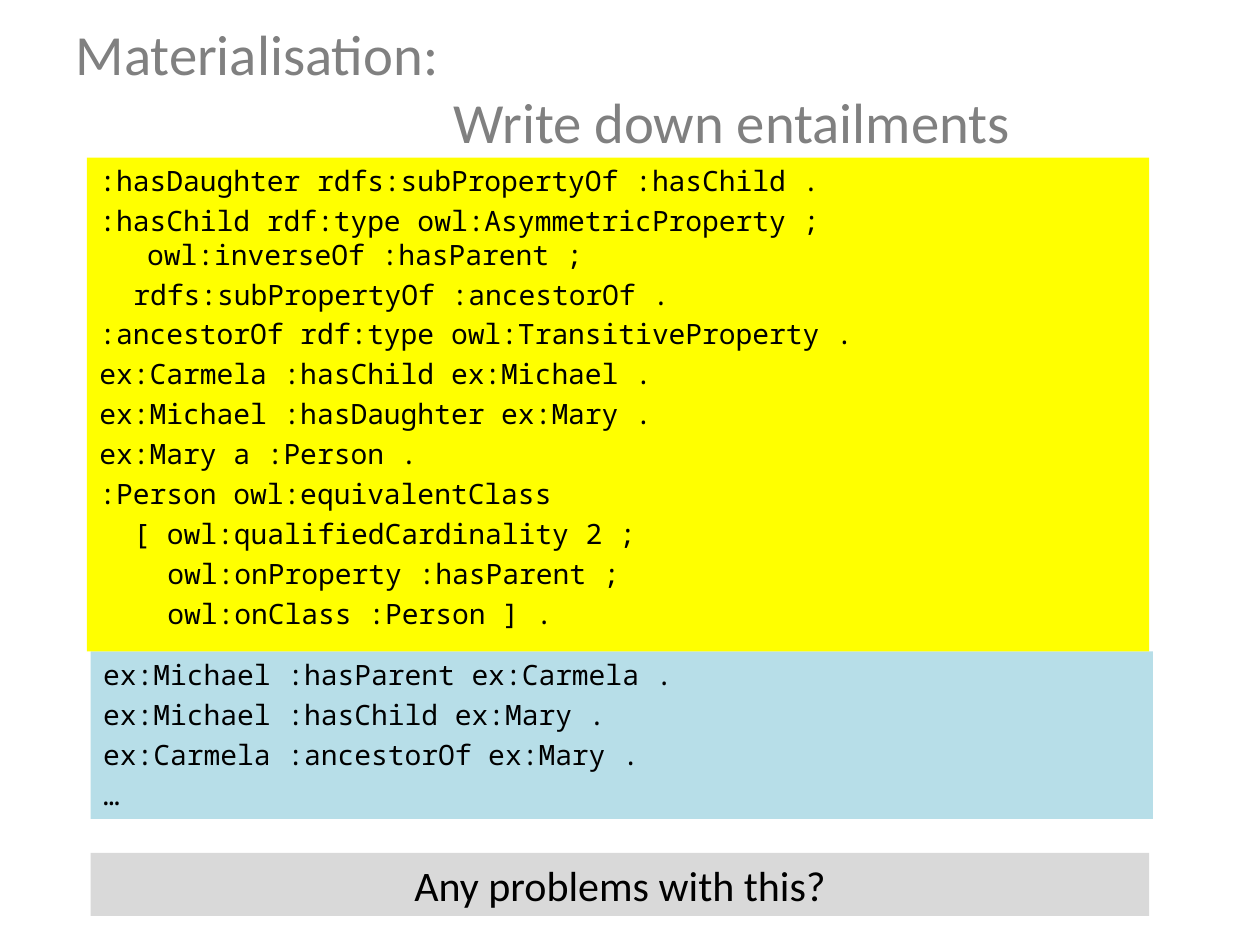
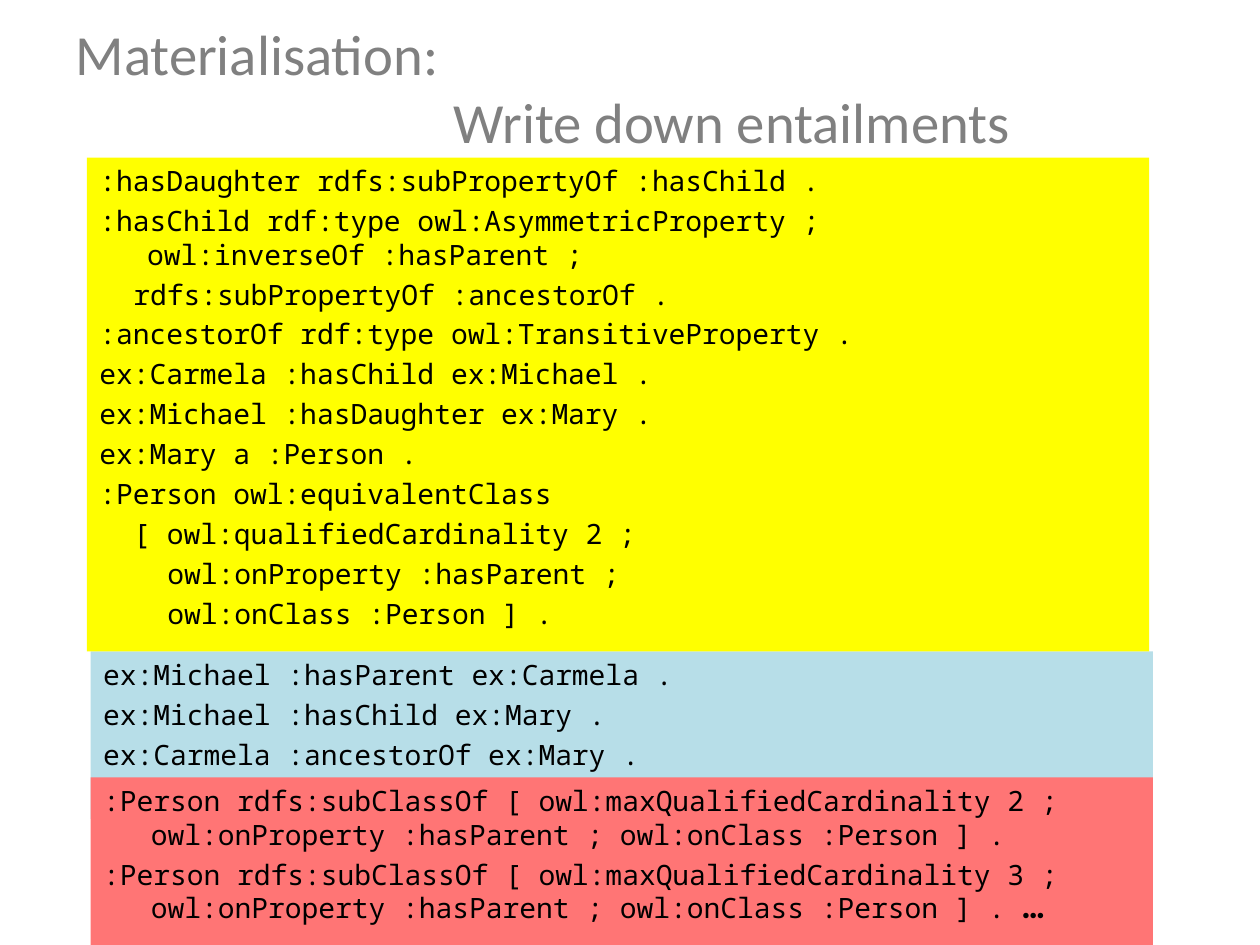
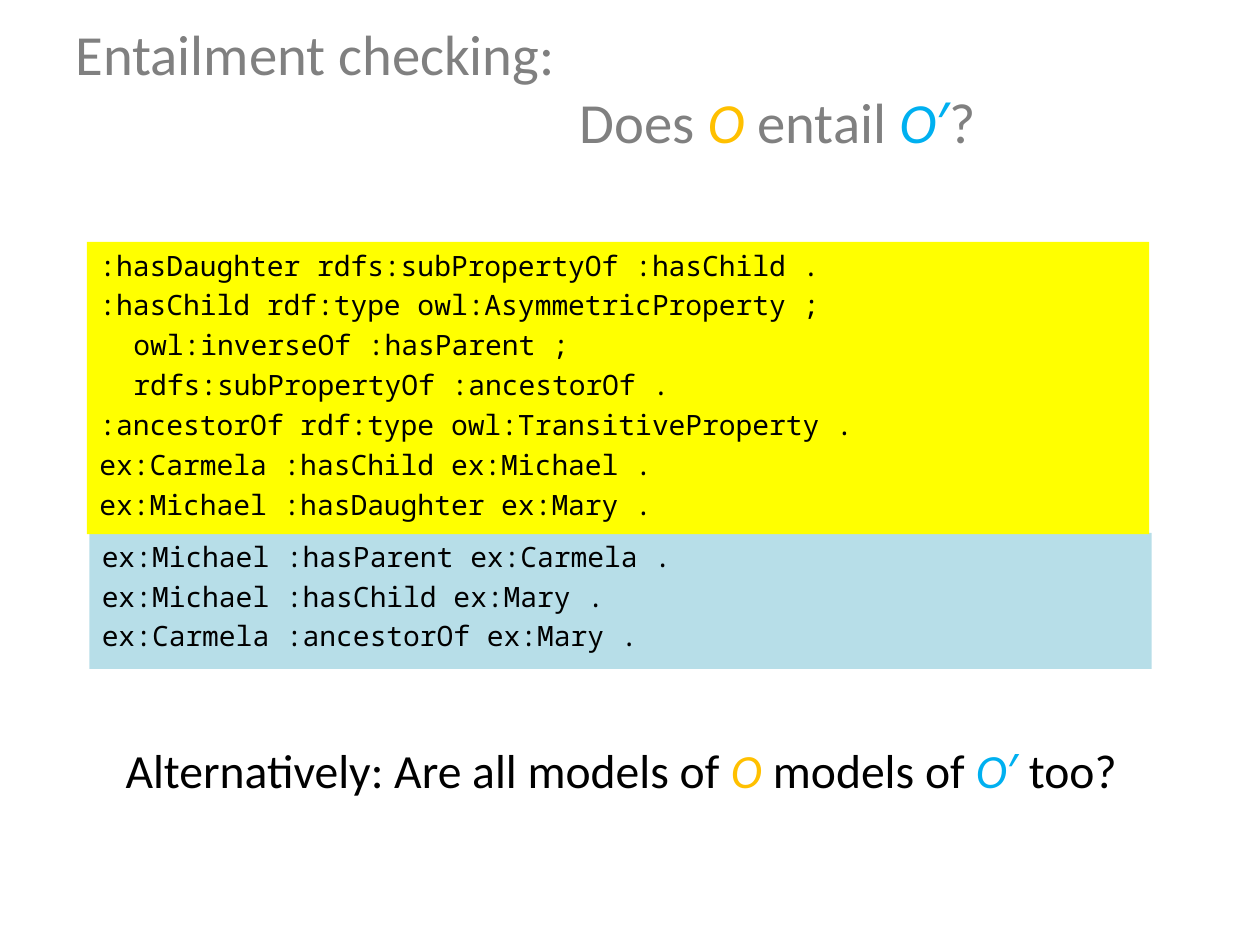
from lxml.etree import SubElement
from pptx import Presentation
from pptx.dml.color import RGBColor
from pptx.enum.shapes import MSO_SHAPE as Preset
from pptx.enum.text import MSO_ANCHOR as Anchor, MSO_AUTO_SIZE as AutoSize, PP_ALIGN as Align
from pptx.oxml.ns import qn
from pptx.util import Inches, Pt

COLOURS = {
    "title": "808080", "text": "000000", "given": "FFFF00", "entailed": "B7DEE8",
    "endless": "FF7575", "question": "D9D9D9", "O": "FFC000", "O′": "00B0F0",
}
BODY_FONT, CODE_FONT, DOTS_FONT = "Calibri", "Noto Sans Mono", "Montserrat"
HANGING = 0.38
CODE_STEP = 0.27

ONTOLOGY = ("O", {"colour": "O", "italic": True})
OTHER_ONTOLOGY = [("O", {"colour": "O′", "italic": True}), ("′", {"colour": "O′"})]

PROPERTY_START = [":hasDaughter rdfs:subPropertyOf :hasChild ."]
PROPERTY_END = [
    (1, "rdfs:subPropertyOf :ancestorOf ."),
    ":ancestorOf rdf:type owl:TransitiveProperty .",
    "ex:Carmela :hasChild ex:Michael .",
    "ex:Michael :hasDaughter ex:Mary .",
]
FAMILY = PROPERTY_START + [
    ":hasChild rdf:type owl:AsymmetricProperty ; owl:inverseOf :hasParent ;",
] + PROPERTY_END + [
    "ex:Mary a :Person .",
    ":Person owl:equivalentClass",
    (1, "[ owl:qualifiedCardinality 2 ;"),
    (2, "owl:onProperty :hasParent ;"),
    (2, "owl:onClass :Person ] ."),
]
SHORT_FAMILY = PROPERTY_START + [
    ":hasChild rdf:type owl:AsymmetricProperty ;",
    (1, "owl:inverseOf :hasParent ;"),
] + PROPERTY_END
ENTAILED = [
    "ex:Michael :hasParent ex:Carmela .",
    "ex:Michael :hasChild ex:Mary .",
    "ex:Carmela :ancestorOf ex:Mary .",
]
CARDINALITY = (":Person rdfs:subClassOf [ owl:maxQualifiedCardinality {} ; "
               "owl:onProperty :hasParent ; owl:onClass :Person ] .")
ENDLESS = [
    CARDINALITY.format(2),
    [CARDINALITY.format(3) + " ", ("...", {"font": DOTS_FONT, "bold": True})],
]
MATERIALISATION = {"topic": "Materialisation:", "line": ["Write down entailments"], "indent": 3}

SLIDES = [
    {"title": MATERIALISATION,
     "boxes": [("entailed", (0.72, 5.17, 8.43, 1.33), ENTAILED + ["…"]),
               ("given", (0.69, 1.25, 8.43, 3.92), FAMILY)],
     "question": "Any problems with this?"},
    {"title": MATERIALISATION,
     "boxes": [("entailed", (0.72, 5.17, 8.43, 1.33), ENTAILED),
               ("given", (0.69, 1.25, 8.43, 3.92), FAMILY),
               ("endless", (0.72, 6.17, 8.43, 1.33), ENDLESS)]},
    {"title": {"topic": "Entailment checking:", "indent": 4,
               "line": ["Does ", ONTOLOGY, " entail ", *OTHER_ONTOLOGY, "?"]},
     "boxes": [("entailed", (0.71, 4.23, 8.43, 1.08), ENTAILED),
               ("given", (0.69, 1.92, 8.43, 2.32), SHORT_FAMILY)],
     "body": ["Alternatively: Are all models of ", ONTOLOGY, " models of ",
              *OTHER_ONTOLOGY, " too?"]},
]


def write(paragraph, content, *, size, font=BODY_FONT, colour="text",
          align=Align.LEFT, before=0, left=0, hanging=0):
    paragraph.alignment = align
    paragraph.space_before = Pt(before)
    properties = paragraph._p.get_or_add_pPr()
    properties.set("marL", str(Inches(left)))
    properties.set("indent", str(Inches(-hanging)))
    SubElement(properties, qn("a:buNone"))
    for part in [content] if isinstance(content, str) else content:
        text, changes = (part, {}) if isinstance(part, str) else part
        run = paragraph.add_run()
        run.text = text
        run.font.size = Pt(size)
        run.font.name = changes.get("font", font)
        run.font.bold = changes.get("bold", False)
        run.font.italic = changes.get("italic", False)
        run.font.color.rgb = RGBColor.from_string(COLOURS[changes.get("colour", colour)])


def place(shape, position, anchor=Anchor.TOP):
    shape.left, shape.top, shape.width, shape.height = map(Inches, position)
    frame = shape.text_frame
    frame.word_wrap = True
    frame.auto_size = AutoSize.NONE
    frame.vertical_anchor = anchor
    return frame


def add_box(slide, fill, position):
    shape = slide.shapes.add_shape(Preset.RECTANGLE, *map(Inches, position))
    shape.shadow.inherit = False
    shape.fill.solid()
    shape.fill.fore_color.rgb = RGBColor.from_string(COLOURS[fill])
    shape.line.fill.background()
    return place(shape, position)


def add_title(slide, title):
    frame = place(slide.shapes.title, (0.5, 0.3, 9, 0.78), Anchor.MIDDLE)
    write(frame.paragraphs[0], title["topic"], size=32.4, colour="title")
    write(frame.add_paragraph(), title["line"], size=32.4, colour="title", left=title["indent"])


def add_code(slide, fill, position, lines):
    frame = add_box(slide, fill, position)
    for index, line in enumerate(lines):
        depth, content = line if isinstance(line, tuple) else (0, line)
        paragraph = frame.add_paragraph() if index else frame.paragraphs[0]
        write(paragraph, content, size=16, font=CODE_FONT, before=3.6,
              left=HANGING + depth * CODE_STEP, hanging=HANGING)


def main():
    presentation = Presentation()
    presentation.slide_width, presentation.slide_height = Inches(10), Inches(7.5)
    title_and_body, title_only = presentation.slide_layouts[1], presentation.slide_layouts[5]
    for content in SLIDES:
        slide = presentation.slides.add_slide(title_and_body if "body" in content else title_only)
        add_title(slide, content["title"])
        for box in content["boxes"]:
            add_code(slide, *box)
        if "question" in content:
            frame = add_box(slide, "question", (0.72, 6.77, 8.4, 0.5))
            write(frame.paragraphs[0], content["question"], size=24, align=Align.CENTER)
        if "body" in content:
            frame = place(slide.placeholders[1], (0.7, 5.83, 8.46, 0.67))
            write(frame.paragraphs[0], content["body"], size=27.2, align=Align.CENTER, before=5.4)
    presentation.save("out.pptx")


if __name__ == "__main__":
    main()
